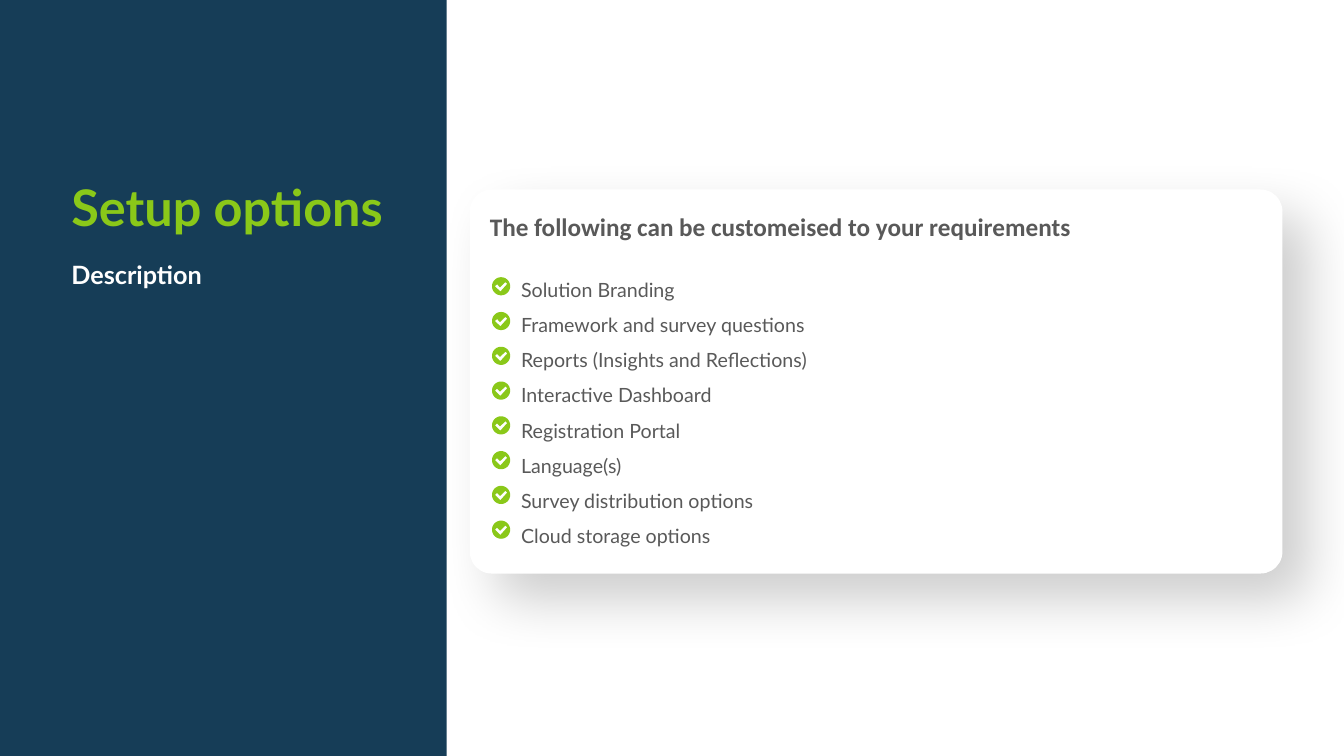
import math

from lxml import etree
from pptx import Presentation, util as u
from pptx.dml.color import RGBColor
from pptx.enum import shapes, text
from pptx.oxml.ns import qn

NAVY, GREEN, WHITE, GREY = "163D57", "8AC819", "FFFFFF", "595959"
OPTIONS = [
    "Solution Branding",
    "Framework and survey questions",
    "Reports (Insights and Reflections)",
    "Interactive Dashboard",
    "Registration Portal",
    "Language(s)",
    "Survey distribution options",
    "Cloud storage options",
]
TICK = [(0.16, 0.5), (0.28, 0.39), (0.44, 0.56), (0.74, 0.27), (0.84, 0.37), (0.46, 0.79)]
DISC = [
    (0.5 + 0.5 * math.cos(math.radians(angle)), 0.5 + 0.5 * math.sin(math.radians(angle)))
    for angle in range(0, 360, 10)
]


def colour(code):
    return RGBColor.from_string(code)


def assign(target, values):
    for name, value in values.items():
        setattr(target, name, value)


class Board:
    cell = u.Inches(0.1)

    def __init__(self, deck):
        self.page = deck.slides.add_slide(deck.slide_layouts[6])
        self.heading = {"name": "Lato", "size": u.Pt(36), "bold": True}
        self.subtitle = {"name": "Lato", "size": u.Pt(18), "bold": True}
        self.lead = {"name": "Calibri", "size": u.Pt(18), "bold": True}
        self.item = {"name": "Lato", "size": u.Pt(14), "bold": False}

    def grid(self, *cells):
        return [round(count * self.cell) for count in cells]

    def paint(self, shape, fill):
        shape.shadow.inherit = False
        shape.fill.solid()
        shape.fill.fore_color.rgb = colour(fill)
        shape.line.fill.background()

    def block(self, kind, area, fill):
        shape = self.page.shapes.add_shape(kind, *self.grid(*area))
        self.paint(shape, fill)
        return shape

    def card(self, area, fill):
        shape = self.block(shapes.MSO_SHAPE.ROUNDED_RECTANGLE, area, fill)
        shape.adjustments[0] = 0.057
        effects = shape._element.spPr.find(qn("a:effectLst"))
        shadow = etree.SubElement(
            effects, qn("a:outerShdw"), blurRad=str(u.Pt(40)), dist=str(u.Pt(26)),
            dir="2700000", algn="tl", rotWithShape="0")
        tint = etree.SubElement(shadow, qn("a:srgbClr"), val="000000")
        etree.SubElement(tint, qn("a:alpha"), val="20000")

    def label(self, area, lines):
        box = self.page.shapes.add_textbox(*self.grid(*area))
        frame = box.text_frame
        assign(frame, {"word_wrap": True, "vertical_anchor": text.MSO_ANCHOR.TOP})
        for index, (words, font, ink, layout, indent) in enumerate(lines):
            para = frame.add_paragraph() if index else frame.paragraphs[0]
            assign(para, layout)
            if indent:
                para._p.get_or_add_pPr().set("marL", str(self.grid(indent)[0]))
            span = para.add_run()
            span.text = words
            assign(span.font, font)
            span.font.color.rgb = colour(ink)

    def check(self, left, top, size, fill):
        def place(points):
            return [self.grid(left + x * size, top + y * size) for x, y in points]

        disc, tick = place(DISC), place(TICK)
        builder = self.page.shapes.build_freeform(*disc[0])
        builder.add_line_segments(disc[1:], close=True)
        builder.move_to(*tick[0])
        builder.add_line_segments(tick[1:], close=True)
        self.paint(builder.convert_to_shape(), fill)


def main():
    deck = Presentation()
    assign(deck, {"slide_width": u.Inches(13.33), "slide_height": u.Inches(7.5)})
    board = Board(deck)
    board.block(shapes.MSO_SHAPE.RECTANGLE, (0, 0, 44.3, 75), NAVY)
    board.label((6.1, 17, 34.5, 9.9), [("Setup options", board.heading, GREEN, {}, 0)])
    board.label((6.1, 25.6, 29.9, 9.9),
                [("Description", board.subtitle, WHITE, {"line_spacing": 0.9}, 0)])
    board.card((46.6, 18.8, 80.6, 38.1), WHITE)
    lead = ("The following can be customeised to your requirements",
            board.lead, GREY, {"space_after": u.Pt(17)}, 0)
    items = [(option, board.item, GREY, {"level": 1, "line_spacing": 1.5}, 3.1)
             for option in OPTIONS]
    board.label((47.6, 20.5, 74, 34.2), [lead, *items])
    for row in range(len(OPTIONS)):
        board.check(48.8, 27.5 + 3.45 * row, 1.8, GREEN)
    deck.save("out.pptx")


if __name__ == "__main__":
    main()
